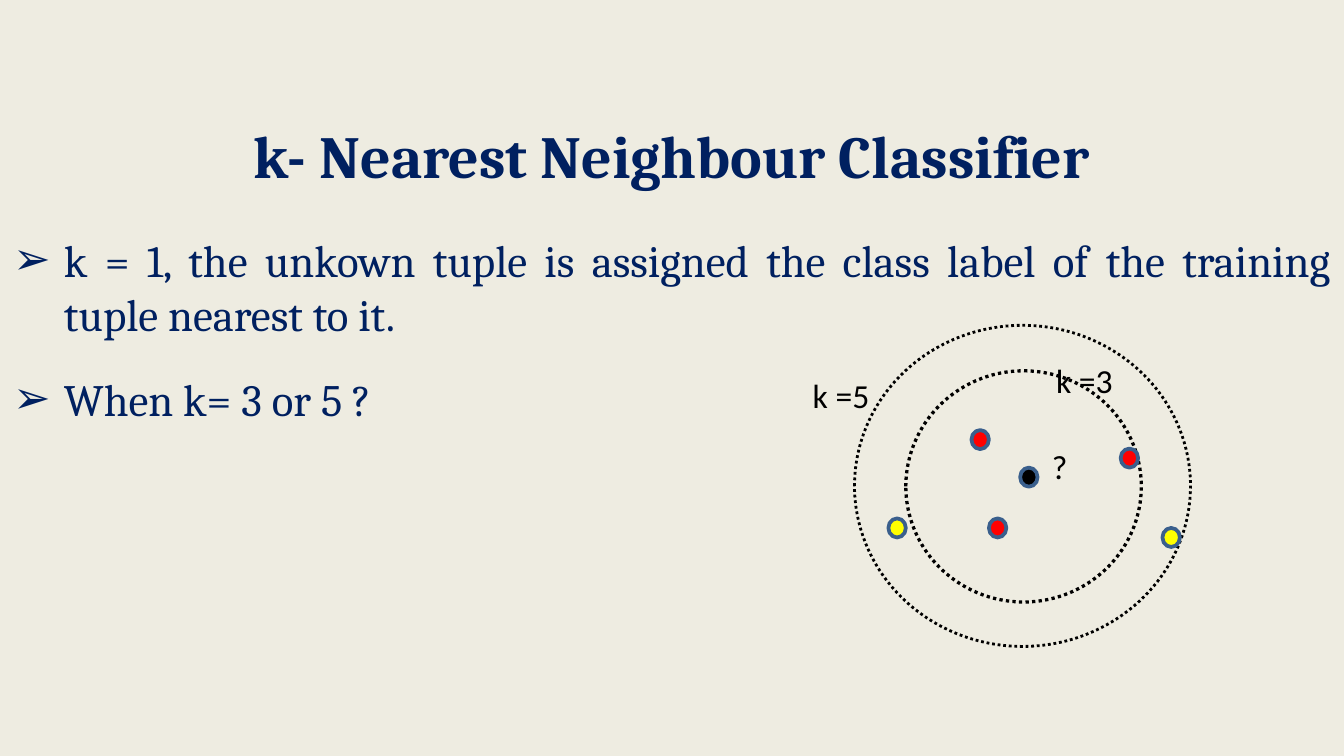
"""Build the k-nearest neighbour classifier slide."""
from typing import NamedTuple, Optional

import pptx
import pptx.dml.color
import pptx.enum.dml
import pptx.enum.shapes
import pptx.enum.text
import pptx.oxml
import pptx.oxml.ns
import pptx.util

Cm = pptx.util.Cm
Pt = pptx.util.Pt
Align = pptx.enum.text.PP_ALIGN
Anchor = pptx.enum.text.MSO_ANCHOR
Dash = pptx.enum.dml.MSO_LINE

NAVY, BLACK, RED, YELLOW = "002060", "000000", "FF0000", "FFFF00"
STEEL, CREAM = "3A5F8C", "EEECE1"
WIDTH, HEIGHT = 25.4, 14.29
DOT_WIDTH, DOT_HEIGHT = 0.33, 0.36
INDENT = 0.96


class Ring(NamedTuple):
    left: float
    top: float
    width: float
    height: float
    weight: float


class Dot(NamedTuple):
    left: float
    top: float
    color: str


class Label(NamedTuple):
    text: str
    left: float
    top: float
    width: float


RINGS = [Ring(16.15, 6.15, 6.35, 6.07, 1.5), Ring(17.12, 7.01, 4.45, 4.37, 1.75)]
LABELS = [
    Label("k =3", 19.71, 6.68, 1.7),
    Label("k =5", 15.11, 6.96, 1.7),
    Label("?", 19.63, 8.31, 0.91),
]
DOTS = [
    Dot(19.28, 8.84, BLACK),
    Dot(18.69, 9.8, RED),
    Dot(21.18, 8.48, RED),
    Dot(18.36, 8.13, RED),
    Dot(16.79, 9.8, YELLOW),
    Dot(21.97, 9.98, YELLOW),
]
POINTS = [
    "k = 1, the unkown tuple is assigned the class label of the training tuple nearest to it.",
    "When k= 3 or 5 ?",
]


def paint(target, color: str) -> None:
    """Give a fill or a font a solid colour from a hex string."""
    if hasattr(target, "solid"):
        target.solid()
        target.fore_color.rgb = pptx.dml.color.RGBColor.from_string(color)
    else:
        target.color.rgb = pptx.dml.color.RGBColor.from_string(color)


def add_box(shapes, left: float, top: float, width: float, height: float, anchor=Anchor.TOP):
    """Add a wrapping text box and return its text frame."""
    frame = shapes.add_textbox(Cm(left), Cm(top), Cm(width), Cm(height)).text_frame
    frame.word_wrap = True
    frame.vertical_anchor = anchor
    return frame


def add_span(para, text: str, size: float, font: str, color: str, bold: bool = False) -> None:
    """Add one formatted run to a paragraph."""
    span = para.add_run()
    span.text = text
    span.font.size = Pt(size)
    span.font.name = font
    span.font.bold = bold
    paint(span.font, color)


def format_bullet(para) -> None:
    """Justify a paragraph and give it a hanging arrow bullet."""
    para.alignment = Align.JUSTIFY
    para.space_before = Pt(4.8)
    para.space_after = Pt(12)
    properties = para._p.get_or_add_pPr()
    properties.set("marL", str(Cm(INDENT)))
    properties.set("indent", str(-Cm(INDENT)))
    namespace = pptx.oxml.ns.nsdecls("a")
    properties.append(pptx.oxml.parse_xml(f'<a:buFont {namespace} typeface="Wingdings"/>'))
    properties[-1].set("typeface", "Arial")
    properties.append(pptx.oxml.parse_xml(f'<a:buChar {namespace} char="➢"/>'))


def add_ellipse(shapes, left: float, top: float, width: float, height: float,
                line: str, weight: float, fill: Optional[str] = None) -> None:
    """Add a filled solid ellipse, or a dotted outline when no fill is given."""
    kind = pptx.enum.shapes.MSO_SHAPE.OVAL
    ellipse = shapes.add_shape(kind, Cm(left), Cm(top), Cm(width), Cm(height))
    ellipse.shadow.inherit = False
    paint(ellipse.line.fill, line)
    ellipse.line.width = Pt(weight)
    if fill:
        paint(ellipse.fill, fill)
    else:
        ellipse.fill.background()
        ellipse.line.dash_style = Dash.ROUND_DOT


def add_diagram(page) -> None:
    """Draw the neighbourhood rings, the tuples and their labels as one group."""
    shapes = page.shapes.add_group_shape().shapes
    for ring in RINGS:
        add_ellipse(shapes, *ring[:4], BLACK, ring.weight)
    for dot in DOTS:
        add_ellipse(shapes, dot.left, dot.top, DOT_WIDTH, DOT_HEIGHT, STEEL, 2, dot.color)
    for label in LABELS:
        frame = add_box(shapes, label.left, label.top, label.width, 1.02)
        add_span(frame.paragraphs[0], label.text, 18, "Calibri", BLACK)


def main() -> None:
    """Build and save the deck."""
    deck = pptx.Presentation()
    deck.slide_width, deck.slide_height = Cm(WIDTH), Cm(HEIGHT)
    page = deck.slides.add_slide(deck.slide_layouts[6])
    paint(page.background.fill, CREAM)

    title = add_box(page.shapes, 0, 2.08, WIDTH, 1.68, Anchor.MIDDLE).paragraphs[0]
    title.alignment = Align.CENTER
    add_span(title, "k- Nearest Neighbour Classifier", 32, "Cambria", NAVY, True)

    body = add_box(page.shapes, 0, 4.27, WIDTH, 8.26)
    for index, point in enumerate(POINTS):
        para = body.add_paragraph() if index else body.paragraphs[0]
        format_bullet(para)
        add_span(para, point, 24, "Cambria", NAVY)

    add_diagram(page)
    deck.save("out.pptx")


if __name__ == "__main__":
    main()
